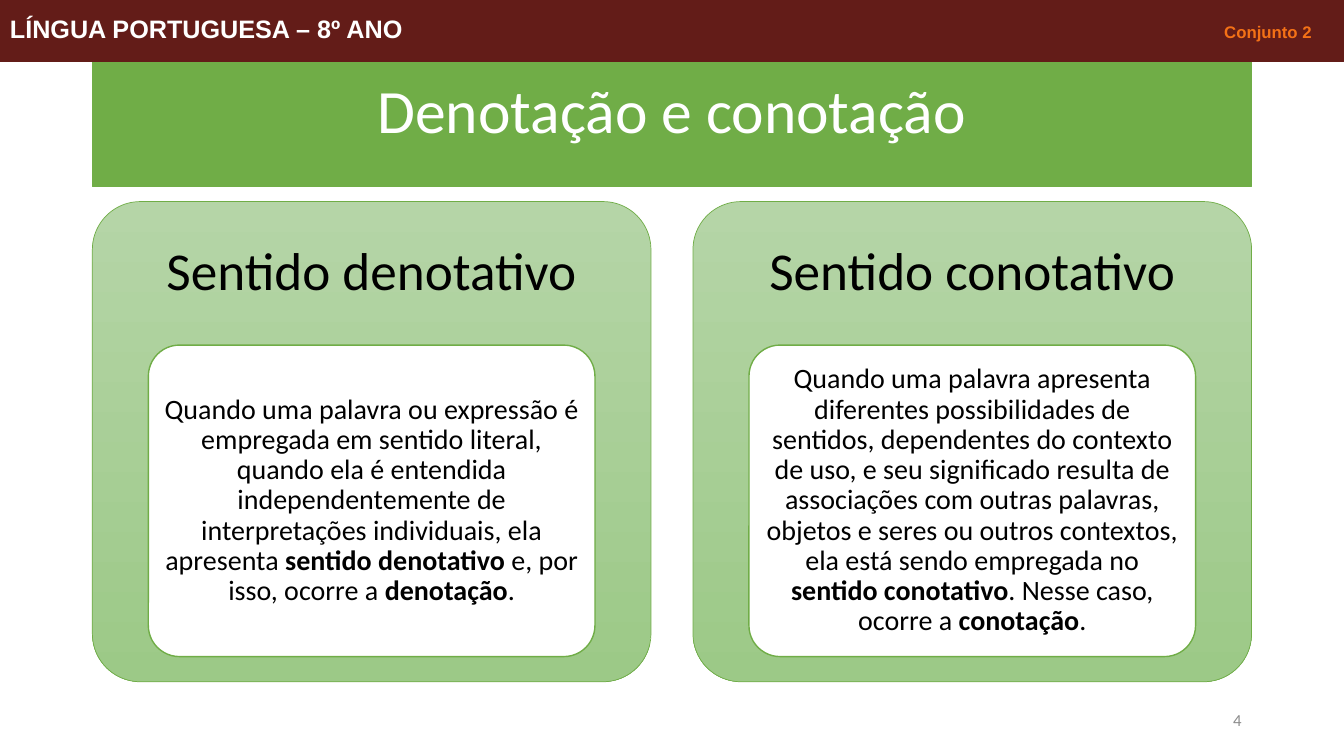
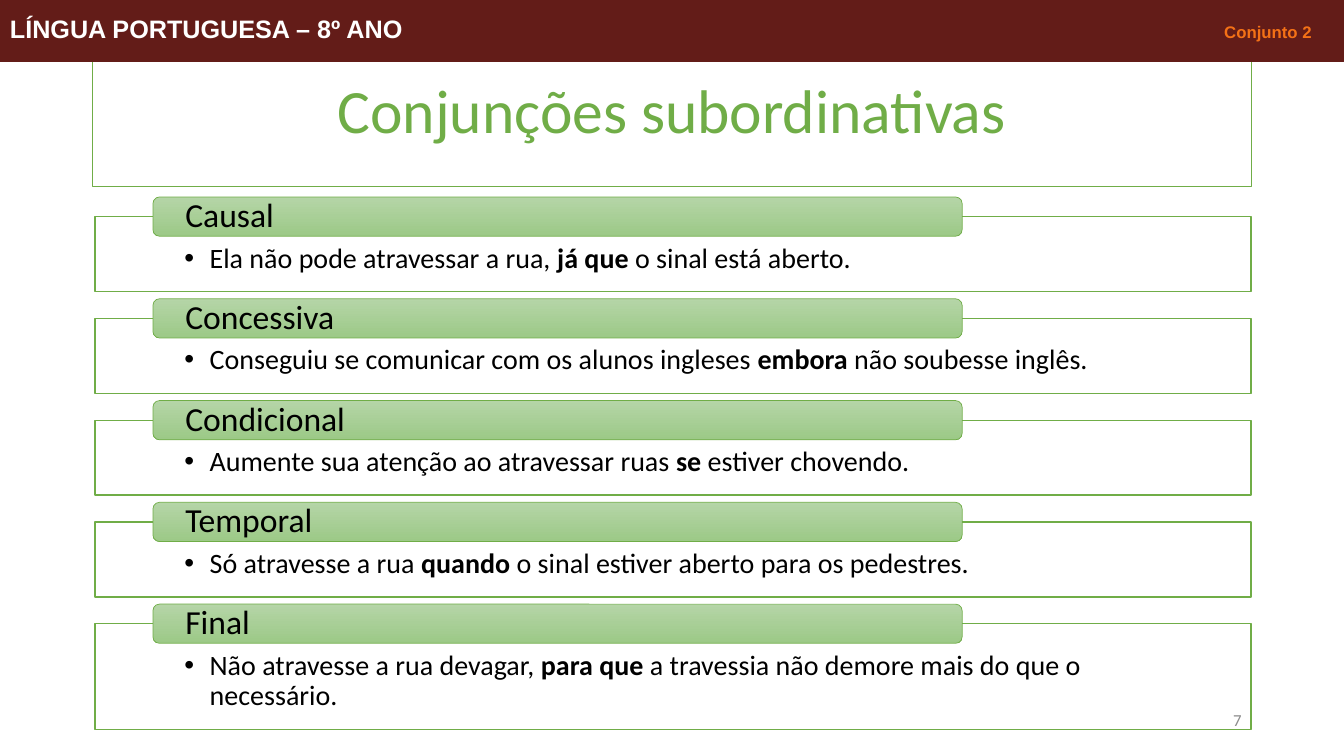
import pptx
import pptx.dml.color
import pptx.enum.shapes
import pptx.enum.text
import pptx.util
from lxml import etree

Pt = pptx.util.Pt
RGBColor = pptx.dml.color.RGBColor
SHAPE = pptx.enum.shapes.MSO_SHAPE
ALIGN = pptx.enum.text.PP_ALIGN
ANCHOR = pptx.enum.text.MSO_ANCHOR

# Shared colours and fonts
GREEN = RGBColor(0x70, 0xAD, 0x47)
LIGHT_GREEN = RGBColor(0xB5, 0xD5, 0xA7)
MID_GREEN = RGBColor(0x9C, 0xC9, 0x87)
MAROON = RGBColor(0x63, 0x1C, 0x18)
ORANGE = RGBColor(0xF4, 0x71, 0x16)
GRAY = RGBColor(0x8C, 0x8C, 0x8C)
BLACK = RGBColor(0, 0, 0)
WHITE = RGBColor(0xFF, 0xFF, 0xFF)
GRADIENT = (LIGHT_GREEN, MID_GREEN)
BODY_FONT = "Calibri"
BAND_FONT = "Arial"
DEFAULT_INSETS = (7.2, 3.6, 7.2, 3.6)

# Slide content; ** encloses bold words
CARDS = [
    ("Sentido denotativo",
     "Quando uma palavra ou expressão é empregada em sentido literal, quando ela é "
     "entendida independentemente de interpretações individuais, ela apresenta "
     "**sentido denotativo **e, por isso, ocorre a **denotação**."),
    ("Sentido conotativo",
     "Quando uma palavra apresenta diferentes possibilidades de sentidos, dependentes "
     "do contexto de uso, e seu significado resulta de associações com outras palavras, "
     "objetos e seres ou outros contextos, ela está sendo empregada no "
     "**sentido conotativo**. Nesse caso, ocorre a **conotação**."),
]
CONJUNCTIONS = [
    ("Causal", "Ela não pode atravessar a rua, **já que **o sinal está aberto."),
    ("Concessiva",
     "Conseguiu se comunicar com os alunos ingleses **embora **não soubesse inglês."),
    ("Condicional", "Aumente sua atenção ao atravessar ruas **se** estiver chovendo."),
    ("Temporal",
     "Só atravesse a rua **quando** o sinal estiver aberto para os pedestres."),
    ("Final",
     "Não atravesse a rua devagar, **para que **a travessia não demore mais do que o "
     "necessário."),
]


def add_block(page, kind, left, top, width, height, fill, line=GREEN, weight=1):
    """Draw a shape with a plain fill, or a vertical gradient for a colour pair."""
    box = page.shapes.add_shape(kind, Pt(left), Pt(top), Pt(width), Pt(height))
    box.shadow.inherit = False
    if fill is GRADIENT:
        box.fill.gradient()
        box.fill.gradient_angle = 270
        for stop, color in zip(box.fill.gradient_stops, fill):
            stop.color.rgb = color
    else:
        box.fill.solid()
        box.fill.fore_color.rgb = fill
    box.line.color.rgb = line
    box.line.width = Pt(weight)
    return box


def format_span(span, size, color, font=BODY_FONT, bold=False):
    span.font.size = Pt(size)
    span.font.color.rgb = color
    span.font.name = font
    span.font.bold = bold


def write(box, text, size, color=BLACK, align=ALIGN.LEFT, anchor=ANCHOR.MIDDLE,
          insets=DEFAULT_INSETS):
    """Fill a box with one paragraph and return that paragraph."""
    frame = box.text_frame
    frame.word_wrap = True
    frame.vertical_anchor = anchor
    (frame.margin_left, frame.margin_top,
     frame.margin_right, frame.margin_bottom) = map(Pt, insets)
    para = frame.paragraphs[0]
    para.alignment = align
    para.line_spacing = 0.9
    for index, piece in enumerate(text.split("**")):
        span = para.add_run()
        span.text = piece
        format_span(span, size, color, bold=index % 2 == 1)
    return para


def add_property(parent, tag, **attributes):
    namespace = "{http://schemas.openxmlformats.org/drawingml/2006/main}"
    return etree.SubElement(parent, namespace + tag, attributes)


def add_bullet(para, indent):
    properties = para._p.get_or_add_pPr()
    properties.set("marL", str(Pt(indent)))
    properties.set("indent", str(-Pt(indent)))
    add_property(properties, "buFont", typeface="Arial")
    add_property(properties, "buChar", char="•")


def add_title(page, text, fill, color):
    box = add_block(page, SHAPE.RECTANGLE, 66, 29, 828, 104.4, fill)
    write(box, text, 44, color, ALIGN.CENTER)


def add_frame(page, number):
    """Page number and top band, which lies over the title's upper edge."""
    box = page.shapes.add_textbox(Pt(678), Pt(500.5), Pt(216), Pt(28.8))
    write(box, str(number), 12, GRAY, ALIGN.RIGHT)

    band = add_block(page, SHAPE.RECTANGLE, 0, 0, 960, 44, MAROON, MAROON, 0.75)
    para = write(band, "LÍNGUA PORTUGUESA – 8º ANO\t**Conjunto 2", 18)
    subject, group = para.runs
    format_span(subject, 18, WHITE, BAND_FONT, True)
    format_span(group, 12, ORANGE, BAND_FONT, True)
    tabs = add_property(para._p.get_or_add_pPr(), "tabLst")
    add_property(tabs, "tab", pos=str(Pt(930)), algn="r")


def add_card(page, left, heading, text):
    card = add_block(page, SHAPE.ROUNDED_RECTANGLE, left, 144, 399, 343, GRADIENT,
                     weight=0.5)
    # The large bottom inset keeps the heading above the inner panel
    write(card, heading, 38, align=ALIGN.CENTER, insets=(0, 0, 0, 240))
    panel = add_block(page, SHAPE.ROUNDED_RECTANGLE, left + 40, 246.5, 319, 222.5, WHITE)
    write(panel, text, 20, align=ALIGN.CENTER, insets=(4, 3, 4, 3))
    for box in (card, panel):
        box.adjustments[0] = 0.1


def add_example(page, top, height, label, sentence):
    row = add_block(page, SHAPE.RECTANGLE, 67.75, top, 826, height, WHITE)
    para = write(row, sentence, 20, anchor=ANCHOR.TOP, insets=(64, 19.5, 64, 11.5))
    add_bullet(para, 18)
    tab = add_block(page, SHAPE.ROUNDED_RECTANGLE, 109.25, top - 14, 578, 28, GRADIENT,
                    weight=0.5)
    write(tab, label, 24, insets=(21.75, 0, 21.75, 0))


def main():
    deck = pptx.Presentation()
    deck.slide_width, deck.slide_height = Pt(960), Pt(540)
    blank = deck.slide_layouts[6]

    # Denotation and connotation
    page = deck.slides.add_slide(blank)
    add_title(page, "Denotação e conotação", GREEN, WHITE)
    for index, (heading, text) in enumerate(CARDS):
        add_card(page, 66 + index * 429, heading, text)
    add_frame(page, 4)

    # Subordinating conjunctions
    page = deck.slides.add_slide(blank)
    add_title(page, "Conjunções subordinativas", WHITE, GREEN)
    for index, (label, sentence) in enumerate(CONJUNCTIONS):
        height = 75.6 if label == "Final" else 53.5
        add_example(page, 154.75 + index * 72.7, height, label, sentence)
    add_frame(page, 7)

    deck.save("out.pptx")


if __name__ == "__main__":
    main()
